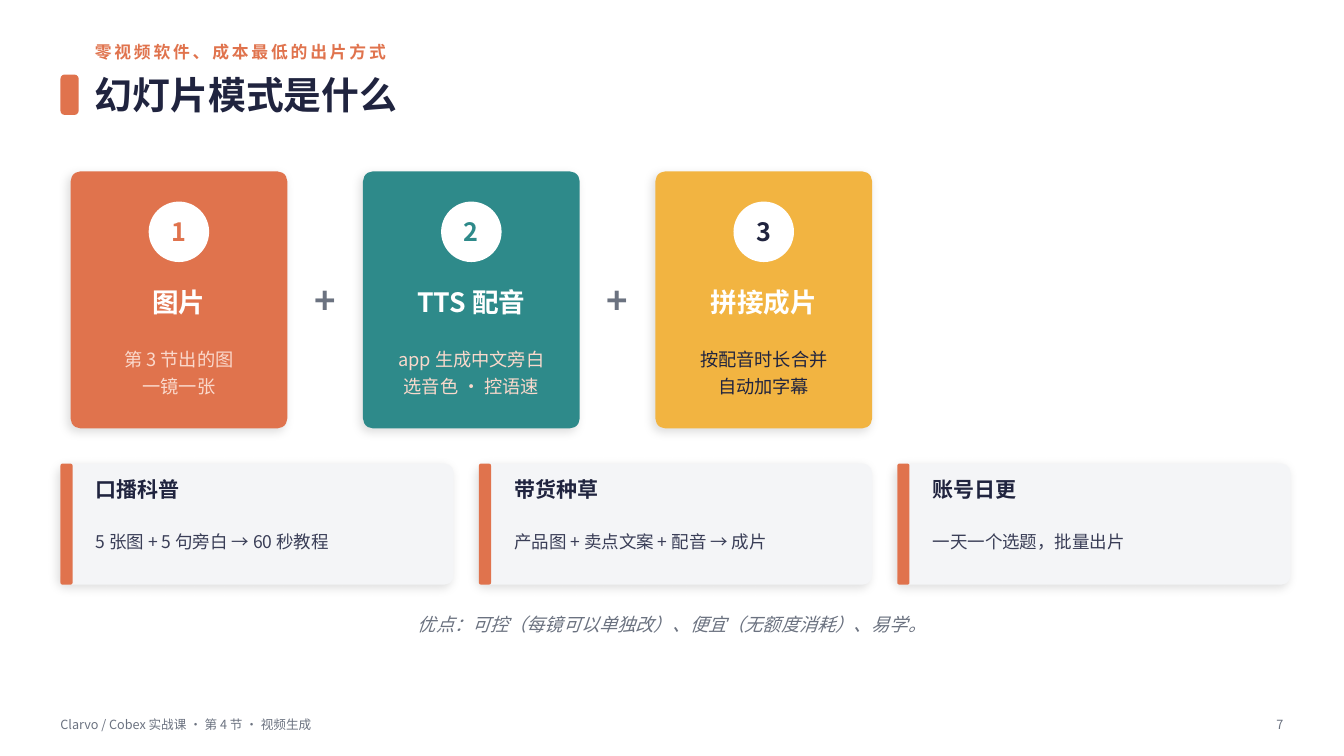
from lxml import etree
from pptx import Presentation
from pptx.dml.color import RGBColor
from pptx.enum.shapes import MSO_SHAPE
from pptx.enum.text import MSO_ANCHOR, MSO_AUTO_SIZE, PP_ALIGN
from pptx.oxml.ns import qn
from pptx.util import Inches, Pt

ROUND, OVAL = MSO_SHAPE.ROUNDED_RECTANGLE, MSO_SHAPE.OVAL
LEFT, CENTER, RIGHT = PP_ALIGN.LEFT, PP_ALIGN.CENTER, PP_ALIGN.RIGHT
FONT = "Noto Sans CJK SC"

ORANGE = RGBColor(0xE0, 0x73, 0x4D)
TEAL = RGBColor(0x2E, 0x8A, 0x8A)
YELLOW = RGBColor(0xF2, 0xB4, 0x41)
NAVY = RGBColor(0x20, 0x24, 0x3F)
SLATE = RGBColor(0x3A, 0x3E, 0x57)
GRAY = RGBColor(0x6B, 0x72, 0x80)
PALE = RGBColor(0xF4, 0xF5, 0xF7)
PEACH = RGBColor(0xFA, 0xD9, 0xCC)
WHITE = RGBColor(0xFF, 0xFF, 0xFF)

# Content
KICKER = "零视频软件、成本最低的出片方式"
TITLE = "幻灯片模式是什么"
STEPS = [  # heading, description, card colour, number colour, description colour
    ("图片", "第 3 节出的图\n一镜一张", ORANGE, ORANGE, PEACH),
    ("TTS 配音", "app 生成中文旁白\n选音色 · 控语速", TEAL, TEAL, PEACH),
    ("拼接成片", "按配音时长合并\n自动加字幕", YELLOW, NAVY, NAVY),
]
USES = [
    ("口播科普", "5 张图 + 5 句旁白 → 60 秒教程"),
    ("带货种草", "产品图 + 卖点文案 + 配音 → 成片"),
    ("账号日更", "一天一个选题，批量出片"),
]
SUMMARY = "优点：可控（每镜可以单独改）、便宜（无额度消耗）、易学。"
FOOTER = "Clarvo / Cobex 实战课 · 第 4 节 · 视频生成"
PAGE = "7"

# Layout, in inches
MARGIN, TITLE_X, TITLE_W = 0.6, 0.94, 11.79
STEP_X, STEP_Y, STEP_W, STEP_H, STEP_GAP = 0.7, 1.7, 2.15, 2.55, 0.75
PAD, BADGE = 0.1, 0.6
USE_Y, USE_W, USE_H, USE_GAP = 4.6, 3.9, 1.2, 0.25

prs = Presentation()
prs.slide_width, prs.slide_height = Inches(13.33), Inches(7.5)
s = prs.slides.add_slide(prs.slide_layouts[5])


def write(sp, text, size, color, align=LEFT, bold=False, italic=False,
          spacing=None, tracking=None):
    tf = sp.text_frame
    tf.text = text
    tf.word_wrap = True
    tf.auto_size = MSO_AUTO_SIZE.NONE
    tf.vertical_anchor = MSO_ANCHOR.MIDDLE
    tf.margin_left = tf.margin_top = tf.margin_right = tf.margin_bottom = 0
    for p in tf.paragraphs:
        p.alignment = align
        if spacing:
            p.line_spacing = spacing
        for r in p.runs:
            f = r.font
            f.name, f.size, f.bold, f.italic = FONT, Pt(size), bold, italic
            f.color.rgb = color
            rpr = r._r.get_or_add_rPr()
            rpr.find(qn("a:latin")).addnext(
                rpr.makeelement(qn("a:ea"), {"typeface": FONT}))
            if tracking:
                rpr.set("spc", str(tracking * 100))


def add_text(x, y, w, h, *args, **style):
    sp = s.shapes.add_textbox(Inches(x), Inches(y), Inches(w), Inches(h))
    write(sp, *args, **style)


def add_box(kind, x, y, w, h, color, radius=0, shadow=False):
    sp = s.shapes.add_shape(kind, Inches(x), Inches(y), Inches(w), Inches(h))
    sp.fill.solid()
    sp.fill.fore_color.rgb = color
    sp.line.fill.background()
    sp.shadow.inherit = False
    if radius:
        sp.adjustments[0] = radius / min(w, h)
    if shadow:
        effects = sp._element.spPr.find(qn("a:effectLst"))
        outer = etree.SubElement(
            effects, qn("a:outerShdw"), blurRad=str(Pt(7)), dist=str(Pt(3)),
            dir=str(135 * 60000), algn="bl", rotWithShape="0")
        black = etree.SubElement(outer, qn("a:srgbClr"), val="000000")
        etree.SubElement(black, qn("a:alpha"), val="12000")
    return sp


# Heading
add_text(TITLE_X, 0.36, TITLE_W, 0.3, KICKER, 12, ORANGE, bold=True, tracking=2)
add_box(ROUND, MARGIN, 0.74, 0.18, 0.4, ORANGE, radius=0.04)
title = s.shapes.title
title.left, title.top = Inches(TITLE_X), Inches(0.64)
title.width, title.height = Inches(TITLE_W), Inches(0.6)
write(title, TITLE, 27, NAVY, bold=True)

# Step cards joined by plus signs
for i, (heading, desc, fill, num_color, desc_color) in enumerate(STEPS):
    x = STEP_X + i * (STEP_W + STEP_GAP)
    inner_x, inner_w = x + PAD, STEP_W - 2 * PAD
    add_box(ROUND, x, STEP_Y, STEP_W, STEP_H, fill, radius=0.1, shadow=True)
    badge = add_box(OVAL, x + (STEP_W - BADGE) / 2, STEP_Y + 0.3, BADGE, BADGE, WHITE)
    write(badge, str(i + 1), 18, num_color, CENTER, bold=True)
    add_text(inner_x, 2.75, inner_w, 0.5, heading, 19, WHITE, CENTER, bold=True)
    add_text(inner_x, 3.3, inner_w, 0.75, desc, 13, desc_color, CENTER, spacing=1.2)
    if i < len(STEPS) - 1:
        add_text(x + STEP_W + PAD, 2.73, STEP_GAP - 2 * PAD, 0.5,
                 "+", 26, GRAY, CENTER, bold=True)

# Use-case cards
for i, (heading, desc) in enumerate(USES):
    x = MARGIN + i * (USE_W + USE_GAP)
    add_box(ROUND, x, USE_Y, USE_W, USE_H, PALE, radius=0.09, shadow=True)
    add_box(ROUND, x, USE_Y, 0.12, USE_H, ORANGE, radius=0.02)
    add_text(x + 0.35, USE_Y, 3.4, 0.5, heading, 15, NAVY, bold=True)
    add_text(x + 0.35, USE_Y + 0.5, 3.4, 0.55, desc, 12.5, SLATE)

# Summary and footer
add_text(MARGIN, 6.02, 12.13, 0.35, SUMMARY, 13, GRAY, CENTER, italic=True)
add_text(MARGIN, 7.04, 9, 0.3, FOOTER, 9, GRAY)
add_text(12.03, 7.04, 0.7, 0.3, PAGE, 9, GRAY, RIGHT)

prs.save("out.pptx")
